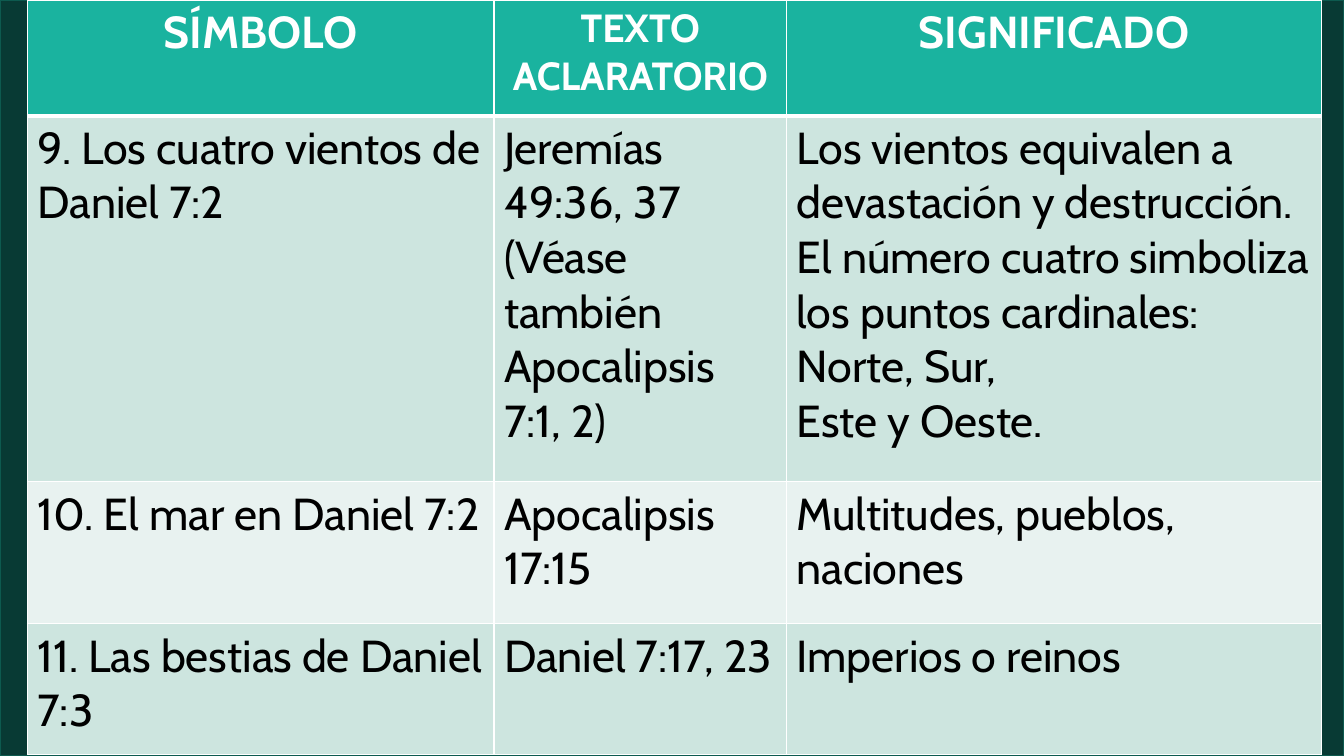
"""Build a slide with a table of prophetic symbols, their texts and meanings."""
from lxml.etree import SubElement
from pptx import Presentation
from pptx.dml.color import RGBColor
from pptx.enum.shapes import MSO_SHAPE
from pptx.enum.text import PP_ALIGN
from pptx.oxml.ns import qn
from pptx.util import Cm, Pt

HEADERS = [("SÍMBOLO", 32), ("TEXTO ACLARATORIO", 28), ("SIGNIFICADO", 32)]
ROWS = [
    ("9. Los cuatro vientos de Daniel 7:2",
     "Jeremías 49:36, 37 (Véase también Apocalipsis 7:1, 2)",
     "Los vientos equivalen a devastación y destrucción. El número cuatro "
     "simboliza los puntos cardinales: Norte, Sur,\nEste y Oeste."),
    ("10. El mar en Daniel 7:2", "Apocalipsis 17:15",
     "Multitudes, pueblos, naciones"),
    ("11. Las bestias de Daniel 7:3", "Daniel 7:17, 23", "Imperios o reinos"),
]
COL_WIDTHS = [11.76, 7.37, 13.49]
ROW_HEIGHTS = [2.92, 9.22, 3.58, 3.3]
TABLE_LEFT = 0.69
BODY_SIZE = 32

NAVY = RGBColor(0x00, 0x20, 0x60)
DARK_GREEN = RGBColor(0x08, 0x3A, 0x34)
EDGE_GREEN = RGBColor(0x0D, 0x5A, 0x4F)
TEAL = RGBColor(0x1A, 0xB3, 0x9F)
BANDS = [RGBColor(0xCD, 0xE5, 0xDF), RGBColor(0xE8, 0xF2, 0xF0)]
WHITE = RGBColor(0xFF, 0xFF, 0xFF)
BLACK = RGBColor(0x00, 0x00, 0x00)

HEADER_STYLE = {"name": "Cabin", "bold": True}
BODY_STYLE = {"name": "Cabin", "bold": False, "size": Pt(BODY_SIZE)}


def set_borders(cell, widths):
    tc_pr = cell._tc.get_or_add_tcPr()
    for i, (side, width) in enumerate(widths.items()):
        ln = SubElement(tc_pr, qn(f"a:ln{side}"), w=str(Pt(width)))
        fill = SubElement(ln, qn("a:solidFill"))
        SubElement(fill, qn("a:srgbClr"), val=str(WHITE))
        tc_pr.insert(i, ln)


def fill_cell(cell, text, fill, color, align, style, widths):
    cell.fill.solid()
    cell.fill.fore_color.rgb = fill
    set_borders(cell, widths)
    tf = cell.text_frame
    tf.text = text
    for p in tf.paragraphs:
        p.alignment = align
        for r in p.runs:
            for key, value in style.items():
                setattr(r.font, key, value)
            r.font.color.rgb = color


def add_backdrop(s, prs):
    sp = s.shapes.add_shape(MSO_SHAPE.RECTANGLE, 0, 0,
                            prs.slide_width, prs.slide_height)
    sp.shadow.inherit = False
    sp.fill.solid()
    sp.fill.fore_color.rgb = DARK_GREEN
    sp.line.color.rgb = EDGE_GREEN
    sp.line.width = Pt(0.85)


def add_symbol_table(s):
    table = s.shapes.add_table(
        len(ROW_HEIGHTS), len(COL_WIDTHS), Cm(TABLE_LEFT), 0,
        Cm(sum(COL_WIDTHS)), Cm(sum(ROW_HEIGHTS))).table
    for col, width in zip(table.columns, COL_WIDTHS):
        col.width = Cm(width)
    for row, height in zip(table.rows, ROW_HEIGHTS):
        row.height = Cm(height)

    thin = dict.fromkeys("LRTB", 1)
    for j, (text, size) in enumerate(HEADERS):
        fill_cell(table.cell(0, j), text, TEAL, WHITE, PP_ALIGN.CENTER,
                  {**HEADER_STYLE, "size": Pt(size)}, {**thin, "B": 3})
    for i, texts in enumerate(ROWS):
        widths = {**thin, "T": 1 if i else 3}
        for j, text in enumerate(texts):
            fill_cell(table.cell(i + 1, j), text, BANDS[i % 2], BLACK,
                      PP_ALIGN.LEFT, BODY_STYLE, widths)


def main():
    prs = Presentation()
    prs.slide_width, prs.slide_height = Cm(33.87), Cm(19.05)
    s = prs.slides.add_slide(prs.slide_layouts[6])
    s.background.fill.solid()
    s.background.fill.fore_color.rgb = NAVY
    add_backdrop(s, prs)
    add_symbol_table(s)
    prs.save("out.pptx")


if __name__ == "__main__":
    main()
